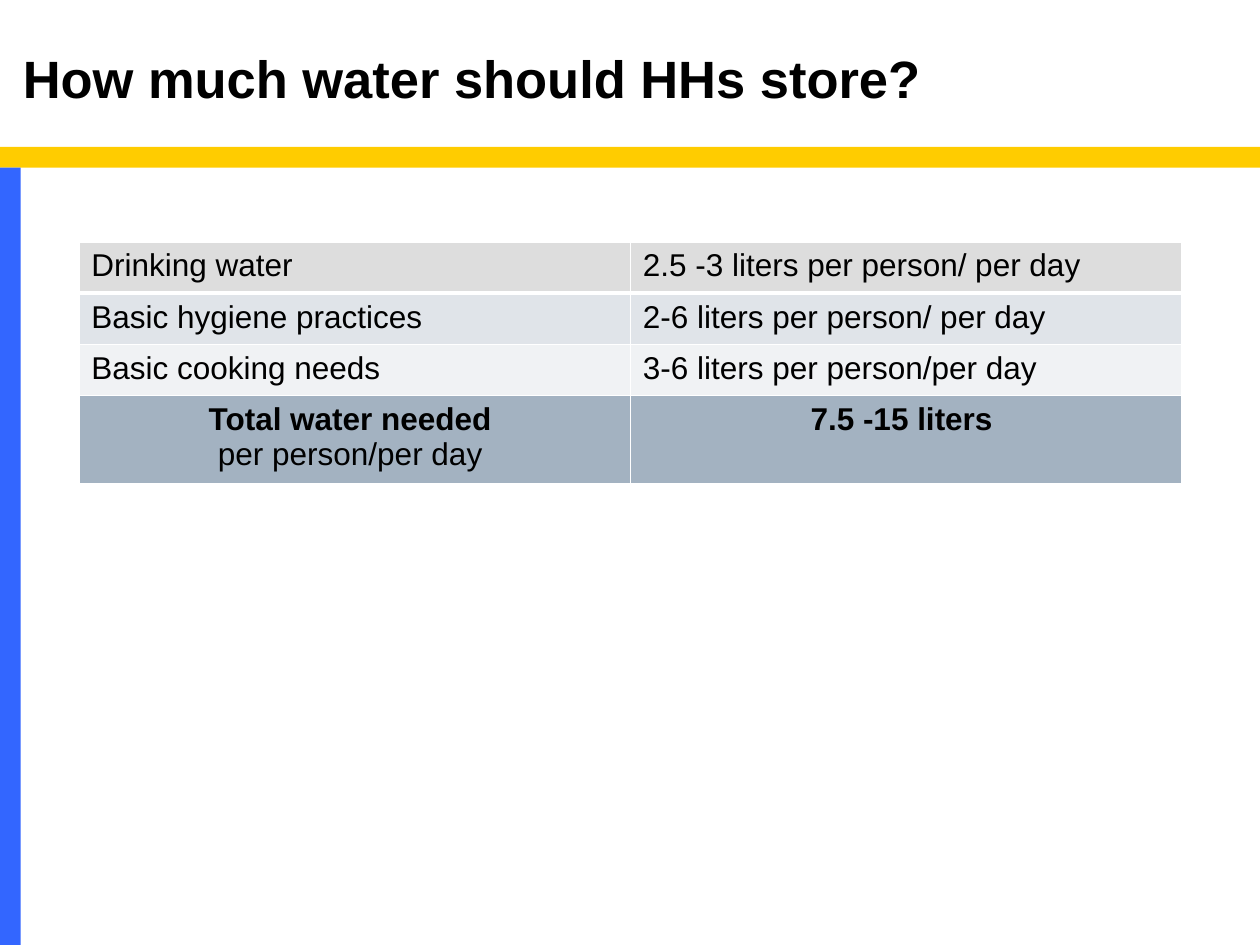
from dataclasses import dataclass

from lxml.etree import SubElement
from pptx import Presentation
from pptx.dml.color import RGBColor
from pptx.enum.shapes import MSO_SHAPE
from pptx.enum.text import MSO_ANCHOR, PP_ALIGN
from pptx.oxml.ns import qn
from pptx.util import Cm, Pt


@dataclass(frozen=True)
class Theme:
    """Colours, font and type sizes of the slide."""
    font: str = "Arial"
    title_size: int = 30
    table_size: int = 18
    text: str = "000000"
    border: str = "FFFFFF"
    top_bar: str = "FFCC00"
    side_bar: str = "3366FF"
    rows: tuple = ("DDDDDD", "E0E4E9", "F0F2F4", "A3B2C1")


THEME = Theme()
NEEDS = [
    ("Drinking water", "2.5 -3 liters per person/ per day"),
    ("Basic hygiene practices", "2-6 liters per person/ per day"),
    ("Basic cooking needs", "3-6 liters per person/per day"),
]
TOTAL = (("Total water needed ", "per person/per day "), ("7.5 -15 liters ",))


def write(p, text, size=THEME.table_size, bold=False, align=PP_ALIGN.LEFT):
    """Write one formatted run into a paragraph."""
    p.alignment = align
    r = p.add_run()
    r.text = text
    r.font.name = THEME.font
    r.font.size = Pt(size)
    r.font.bold = bold
    r.font.color.rgb = RGBColor.from_string(THEME.text)


def add_bar(s, left, top, width, height, color):
    """Add a plain coloured bar."""
    sp = s.shapes.add_shape(MSO_SHAPE.RECTANGLE, left, top, width, height)
    sp.shadow.inherit = False
    sp.fill.solid()
    sp.fill.fore_color.rgb = RGBColor.from_string(color)
    sp.line.fill.background()


def add_title(s, text):
    """Add the slide title, resting on the bottom of its box."""
    tf = s.shapes.add_textbox(Cm(0.21), Cm(0.64), Cm(22.23), Cm(1.69)).text_frame
    tf.word_wrap = True
    tf.vertical_anchor = MSO_ANCHOR.BOTTOM
    write(tf.paragraphs[0], text, size=THEME.title_size, bold=True)


def style_cell(cell, color, top=1, bottom=1):
    """Give a cell its fill and its border widths in points."""
    tc_pr = cell._tc.get_or_add_tcPr()
    for side, width in (("L", 1), ("R", 1), ("T", top), ("B", bottom)):
        ln = SubElement(tc_pr, qn(f"a:ln{side}"), w=str(Pt(width)))
        fill = SubElement(ln, qn("a:solidFill"))
        SubElement(fill, qn("a:srgbClr"), val=THEME.border)
    cell.fill.solid()
    cell.fill.fore_color.rgb = RGBColor.from_string(color)


def add_needs_table(s):
    """Add the table of water needs with its total row."""
    row_h, total_h = Cm(1.03), Cm(1.65)
    n = len(NEEDS)
    table = s.shapes.add_table(n + 1, 2, Cm(1.59), Cm(4.88), Cm(22.23),
                               row_h * n + total_h).table
    table.first_row = table.horz_banding = False
    for i, row in enumerate(table.rows):
        row.height = row_h if i < n else total_h
        for cell in row.cells:
            style_cell(cell, THEME.rows[i], top=3 if i == 1 else 1,
                       bottom=3 if i == 0 else 1)
    for i, need in enumerate(NEEDS):
        for j, text in enumerate(need):
            write(table.cell(i, j).text_frame.paragraphs[0], text)
    for j, lines in enumerate(TOTAL):
        tf = table.cell(n, j).text_frame
        for k, text in enumerate(lines):
            p = tf.add_paragraph() if k else tf.paragraphs[0]
            write(p, text, bold=k == 0, align=PP_ALIGN.CENTER)


def main():
    """Build and save the slide."""
    prs = Presentation()
    prs.slide_width, prs.slide_height = Cm(25.4), Cm(19.05)
    s = prs.slides.add_slide(prs.slide_layouts[6])
    bar, top = Cm(0.42), Cm(2.96)
    add_bar(s, 0, top, prs.slide_width, bar, THEME.top_bar)
    add_bar(s, 0, top + bar, bar, prs.slide_height - top - bar, THEME.side_bar)
    add_title(s, "How much water should HHs store?")
    add_needs_table(s)
    prs.save("out.pptx")


if __name__ == "__main__":
    main()
